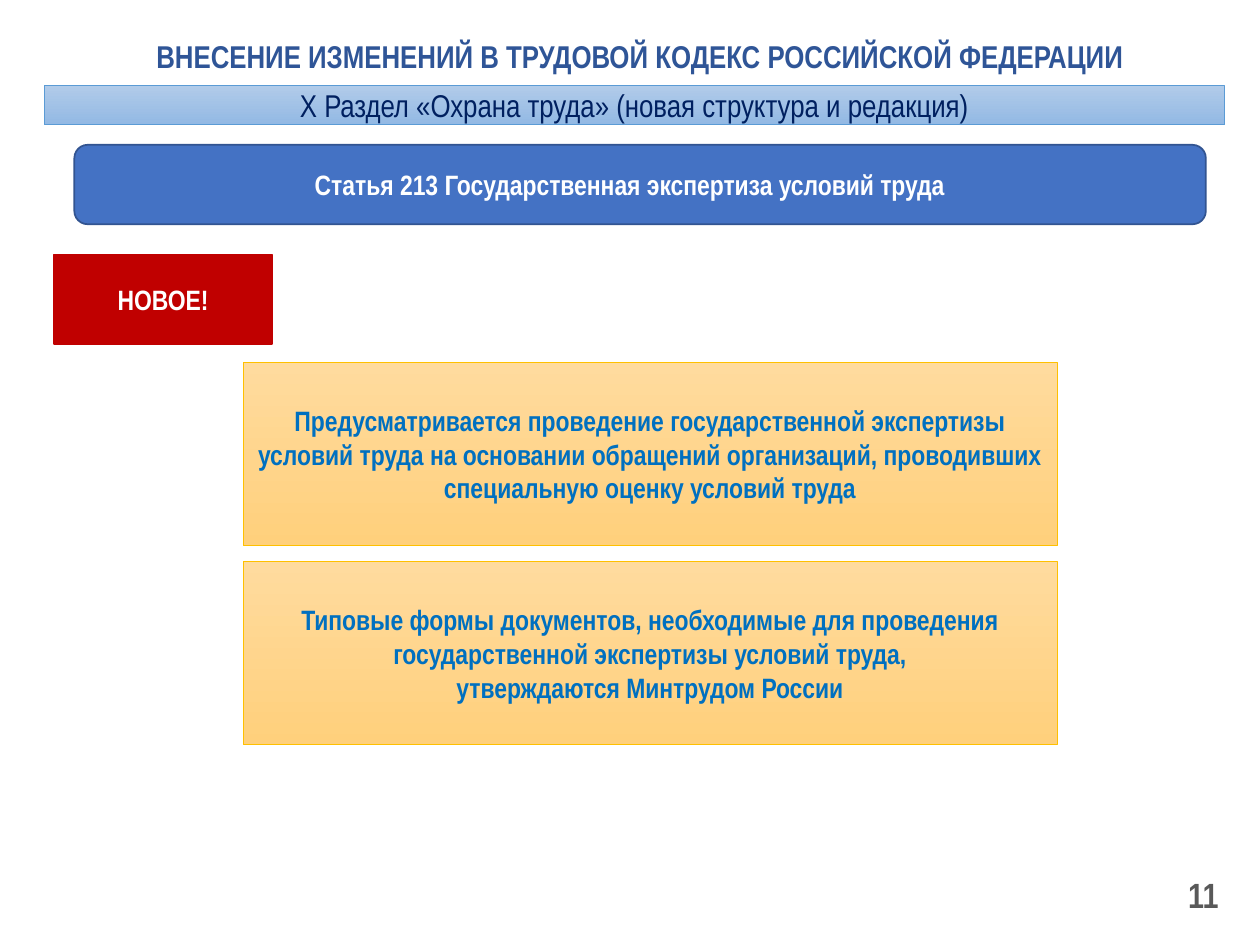
from dataclasses import dataclass

from pptx import Presentation
from pptx.dml.color import RGBColor
from pptx.enum.shapes import MSO_SHAPE
from pptx.enum.text import MSO_ANCHOR, MSO_AUTO_SIZE, PP_ALIGN
from pptx.util import Inches, Pt

RECTANGLE = MSO_SHAPE.RECTANGLE
ROUNDED = MSO_SHAPE.ROUNDED_RECTANGLE
MIDDLE = MSO_ANCHOR.MIDDLE
NO_AUTOFIT = MSO_AUTO_SIZE.NONE
CENTER = PP_ALIGN.CENTER
RIGHT = PP_ALIGN.RIGHT
TITLE_ONLY = 5


@dataclass(frozen=True)
class Theme:
    font: str = "Arial Narrow"
    heading_size: int = 18
    body_size: int = 16
    number_size: int = 20
    title: str = "2F5597"
    white: str = "FFFFFF"
    number: str = "595959"
    section_text: str = "002060"
    section_fill: tuple = ("B1CBE9", "93B9E4")
    section_line: str = "5B9BD5"
    article_fill: str = "4472C4"
    article_line: str = "325491"
    badge: str = "C00000"
    point_text: str = "0070C0"
    point_fill: tuple = ("FFDB9E", "FFD07C")
    point_line: str = "FFC000"


THEME = Theme()

POINTS = (
    "Предусматривается проведение государственной экспертизы условий труда "
    "на основании обращений организаций, проводивших специальную оценку условий труда",
    "Типовые формы документов, необходимые для проведения государственной "
    "экспертизы условий труда,\nутверждаются Минтрудом России",
)
POINT_TOP = 2.88
POINT_HEIGHT = 1.45
POINT_GAP = 0.13


def color(value):
    return RGBColor.from_string(value)


def write_text(shape, text, size, text_color, bold=True, alignment=CENTER):
    frame = shape.text_frame
    frame.text = text
    frame.word_wrap = True
    frame.auto_size = NO_AUTOFIT
    frame.vertical_anchor = MIDDLE
    for paragraph in frame.paragraphs:
        paragraph.alignment = alignment
        for run in paragraph.runs:
            run.font.name = THEME.font
            run.font.size = Pt(size)
            run.font.bold = bold
            run.font.color.rgb = color(text_color)


def set_fill(shape, fill):
    """Fill with one colour, or fade a pair of colours from top to bottom."""
    if isinstance(fill, str):
        shape.fill.solid()
        shape.fill.fore_color.rgb = color(fill)
        return
    shape.fill.gradient()
    shape.fill.gradient_angle = 270
    for stop, value, position in zip(shape.fill.gradient_stops, fill, (0, 1)):
        stop.color.rgb = color(value)
        stop.position = position


def add_box(slide, kind, bounds, fill, line, line_width=1):
    shape = slide.shapes.add_shape(kind, *map(Inches, bounds))
    shape.shadow.inherit = False
    set_fill(shape, fill)
    shape.line.color.rgb = color(line)
    shape.line.width = Pt(line_width)
    return shape


def add_title(slide, text):
    title = slide.shapes.title
    title.left, title.top = Inches(0.83), Inches(0.13)
    title.width, title.height = Inches(8.5), Inches(0.63)
    write_text(title, text, THEME.heading_size, THEME.title)


def add_section(slide, text):
    section = add_box(slide, RECTANGLE, (0.35, 0.68, 9.37, 0.31),
                      THEME.section_fill, THEME.section_line, 0.5)
    write_text(section, text, THEME.heading_size, THEME.section_text, bold=False)


def add_article(slide, text):
    article = add_box(slide, ROUNDED, (0.59, 1.15, 8.98, 0.63),
                      THEME.article_fill, THEME.article_line)
    write_text(article, text, THEME.body_size, THEME.white)
    article.text_frame.margin_right = Inches(0.26)


def add_badge(slide, text):
    badge = add_box(slide, RECTANGLE, (0.43, 2.02, 1.73, 0.71), THEME.badge, THEME.badge)
    write_text(badge, text, THEME.body_size, THEME.white)


def add_points(slide, points):
    for index, text in enumerate(points):
        top = POINT_TOP + index * (POINT_HEIGHT + POINT_GAP)
        point = add_box(slide, RECTANGLE, (1.93, top, 6.46, POINT_HEIGHT),
                        THEME.point_fill, THEME.point_line, 0.5)
        write_text(point, text, THEME.body_size, THEME.point_text)


def add_page_number(slide, text):
    number = slide.shapes.add_textbox(Inches(7.44), Inches(6.9), Inches(2.33), Inches(0.4))
    write_text(number, text, THEME.number_size, THEME.number, alignment=RIGHT)


def main():
    presentation = Presentation()
    presentation.slide_width = Inches(10)
    presentation.slide_height = Inches(7.5)
    slide = presentation.slides.add_slide(presentation.slide_layouts[TITLE_ONLY])
    add_title(slide, "ВНЕСЕНИЕ ИЗМЕНЕНИЙ В ТРУДОВОЙ КОДЕКС РОССИЙСКОЙ ФЕДЕРАЦИИ")
    add_section(slide, "Х Раздел «Охрана труда» (новая структура и редакция)")
    add_article(slide, "Статья 213 Государственная экспертиза условий труда")
    add_badge(slide, "НОВОЕ!")
    add_points(slide, POINTS)
    add_page_number(slide, "11")
    presentation.save("out.pptx")


if __name__ == "__main__":
    main()
